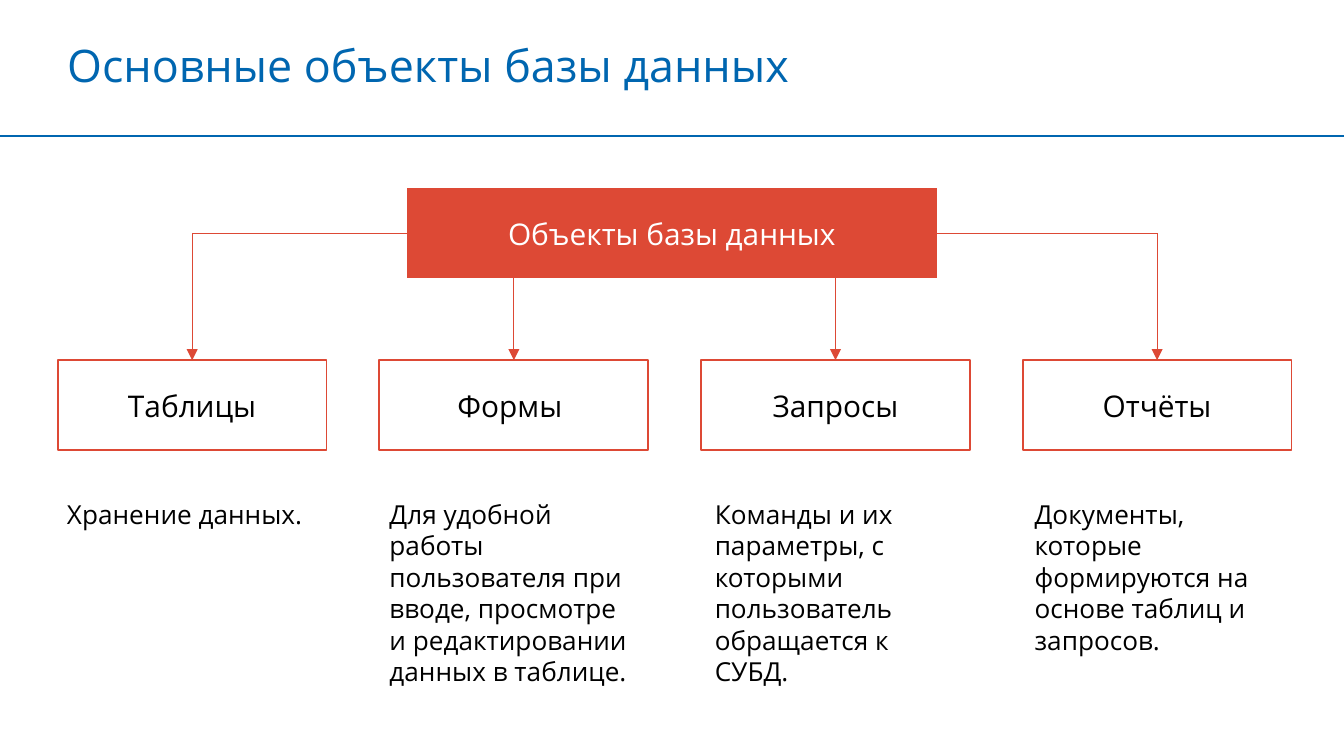
from dataclasses import dataclass

from lxml.etree import SubElement
from pptx import Presentation
from pptx.dml.color import RGBColor
from pptx.enum.shapes import MSO_CONNECTOR, MSO_SHAPE
from pptx.enum.text import MSO_ANCHOR, MSO_AUTO_SIZE, PP_ALIGN
from pptx.oxml.ns import qn
from pptx.util import Inches, Pt


@dataclass(frozen=True)
class Theme:
    font: str = "Open Sans"
    blue: str = "0066B0"
    red: str = "DD4935"
    white: str = "FFFFFF"
    black: str = "000000"
    title: int = 24
    label: int = 16
    note: int = 14


THEME = Theme()

# Label, left edge of the note, note
OBJECTS = [
    ("Таблицы", 0.4, "Хранение данных."),
    ("Формы ", 2.8, "Для удобной работы пользователя при вводе, "
                    "просмотре и редактировании данных в таблице."),
    ("Запросы", 5.22, "Команды и их параметры, с которыми пользователь "
                      "обращается к СУБД."),
    ("Отчёты", 7.6, "Документы, которые формируются на основе таблиц "
                    "и запросов."),
]

FIRST, LAST = 0.43, 7.61
STEP = (LAST - FIRST) / (len(OBJECTS) - 1)
BOX_TOP, BOX_W, BOX_H = 2.68, 2, 0.67


def rgb(code):
    return RGBColor.from_string(code)


def write(frame, text, size, color, align=PP_ALIGN.LEFT):
    frame.text = text
    frame.word_wrap = True
    frame.auto_size = MSO_AUTO_SIZE.NONE
    para = frame.paragraphs[0]
    para.alignment = align
    font = para.runs[0].font
    font.name, font.size = THEME.font, Pt(size)
    font.color.rgb = rgb(color)


def add_title(slide, text):
    title = slide.shapes.title
    title.left, title.top = Inches(0.4), Inches(0.23)
    title.width, title.height = Inches(8.12), Inches(0.5)
    write(title.text_frame, text, THEME.title, THEME.blue)
    title.text_frame.vertical_anchor = MSO_ANCHOR.TOP


def add_box(slide, kind, area, text, fill, color):
    box = slide.shapes.add_shape(kind, *map(Inches, area))
    box.shadow.inherit = False
    box.fill.solid()
    box.fill.fore_color.rgb = rgb(fill)
    box.line.fill.background()
    frame = box.text_frame
    write(frame, text, THEME.label, color, PP_ALIGN.CENTER)
    frame.vertical_anchor = MSO_ANCHOR.MIDDLE
    frame.margin_left = frame.margin_right = Inches(0.2)
    frame.margin_top = frame.margin_bottom = Inches(0.2)
    return box


def add_child(slide, left, text):
    box = add_box(slide, MSO_SHAPE.RECTANGLE, (left, BOX_TOP, BOX_W, BOX_H),
                  text, THEME.white, THEME.black)
    box.line.color.rgb = rgb(THEME.red)
    box.line.width = Pt(1)
    box.text_frame.paragraphs[0].line_spacing = Pt(20)
    return box


def add_note(slide, left, text):
    note = slide.shapes.add_textbox(
        Inches(left), Inches(3.66), Inches(2), Inches(1.51))
    write(note.text_frame, text, THEME.note, THEME.black)


def add_line(slide, start, end, color, width):
    """Draw a straight line between two points given as lengths."""
    line = slide.shapes.add_connector(MSO_CONNECTOR.STRAIGHT, *start, *end)
    line.line.color.rgb = rgb(color)
    line.line.width = Pt(width)
    SubElement(line._element.spPr, qn("a:effectLst"))
    return line


def add_arrow(slide, x, top, box):
    """Drop an arrow from a height to the top of a box."""
    arrow = add_line(slide, (x, top), (x, box.top), THEME.red, 0.5)
    arrow.end_connect(box, 0)
    SubElement(arrow.line._get_or_add_ln(), qn("a:tailEnd"), type="triangle")


def add_branch(slide, root, box, side=None):
    """Link root to box, from a side of root or else from its bottom edge."""
    x = box.left + box.width // 2
    if side is None:
        add_arrow(slide, x, root.top + root.height, box)
        return
    y = root.top + root.height // 2
    edge = root.left if side == 1 else root.left + root.width
    line = add_line(slide, (edge, y), (x, y), THEME.red, 0.5)
    line.begin_connect(root, side)
    add_arrow(slide, x, y, box)


def main():
    deck = Presentation()
    deck.slide_width = Inches(10)
    deck.slide_height = deck.slide_width * 9 // 16
    slide = deck.slides.add_slide(deck.slide_layouts[5])

    add_title(slide, "Основные объекты базы данных")
    add_line(slide, (0, Inches(1.01)), (deck.slide_width, Inches(1.01)),
             THEME.blue, 1)
    root = add_box(slide, MSO_SHAPE.FLOWCHART_PROCESS, (3.03, 1.4, 3.94, 0.67),
                   "Объекты базы данных", THEME.red, THEME.white)

    sides = {0: 1, len(OBJECTS) - 1: 3}
    for i, (label, left, note) in enumerate(OBJECTS):
        box = add_child(slide, FIRST + i * STEP, label)
        add_branch(slide, root, box, sides.get(i))
        add_note(slide, left, note)

    deck.save("out.pptx")


if __name__ == "__main__":
    main()
